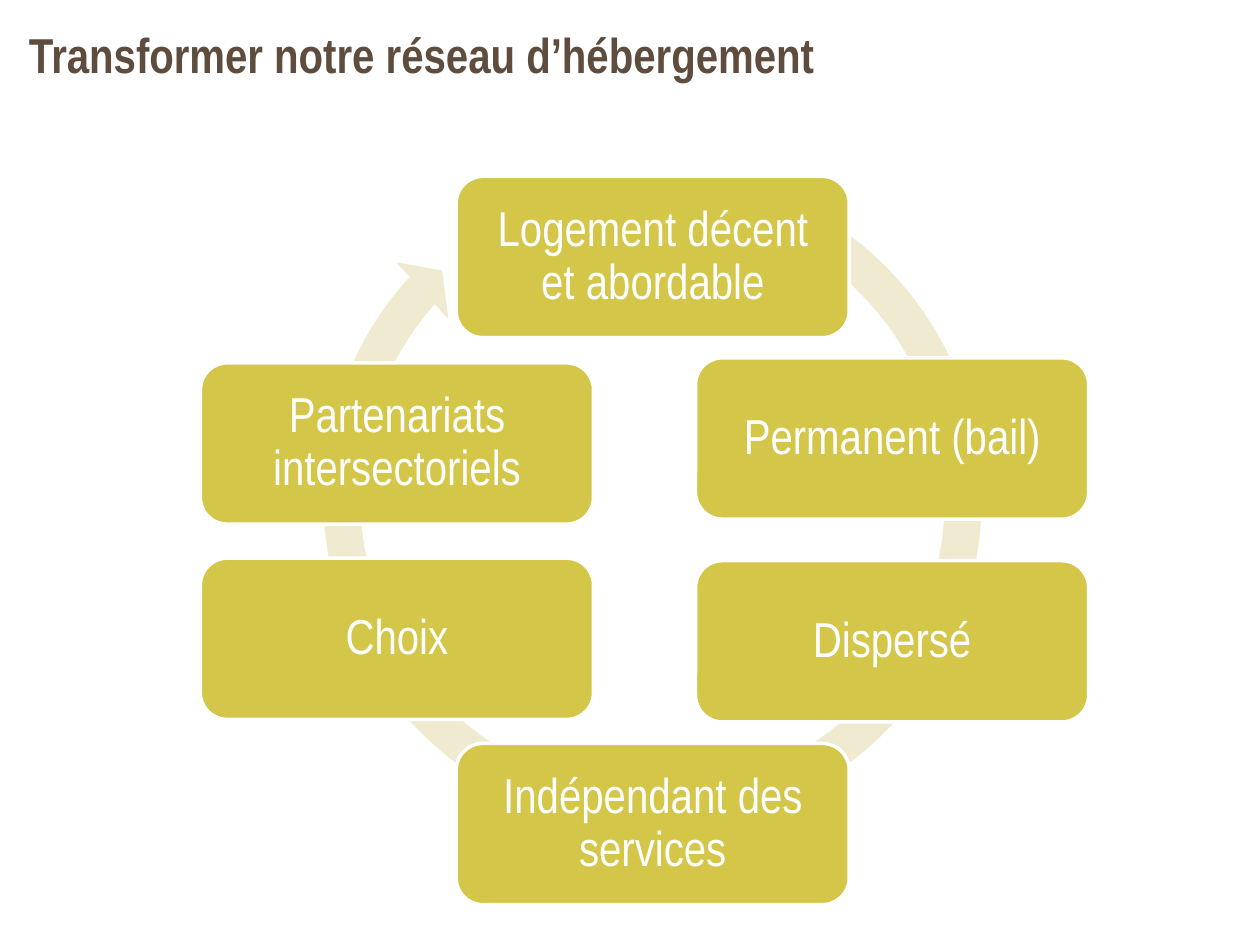
from pptx import Presentation
from pptx.dml.color import RGBColor
from pptx.enum.shapes import MSO_SHAPE as Shape
from pptx.enum.text import MSO_ANCHOR as Anchor, PP_ALIGN as Align
from pptx.util import Inches, Pt

WHITE = RGBColor(0xFF, 0xFF, 0xFF)
BROWN = RGBColor(0x5E, 0x4D, 0x3E)
OLIVE = RGBColor(0xD3, 0xC6, 0x49)
CREAM = RGBColor(0xEF, 0xEA, 0xD0)
FONT = "Arial Narrow"
COLS, ROWS = 100, 75
CELL = Inches(10) // COLS
CARD = (31.2, 12.8)
LEFT, MID, RIGHT = 15.9, 36.2, 55.2
STEPS = [
    ("Logement décent et abordable", MID, 14),
    ("Permanent (bail)", RIGHT, 28.4),
    ("Dispersé", RIGHT, 44.5),
    ("Indépendant des services", MID, 59),
    ("Choix", LEFT, 44.3),
    ("Partenariats intersectoriels", LEFT, 28.8),
]


def grid(*cells):
    """Turn counts of grid cells into slide lengths."""
    return [round(n * CELL) for n in cells]


def write(frame, text, color, pads, align, bold=False):
    """Fill a text frame with one styled paragraph."""
    frame.word_wrap = True
    frame.margin_left = frame.margin_right = Inches(pads[0])
    frame.margin_top = frame.margin_bottom = Inches(pads[1])
    para = frame.paragraphs[0]
    para.text = text
    para.alignment = align
    para.line_spacing = 0.9
    font = para.runs[0].font
    font.name, font.size, font.bold = FONT, Pt(28), bold
    font.color.rgb = color


def add_form(slide, kind, box, fill):
    """Add a flat filled preset shape."""
    form = slide.shapes.add_shape(kind, *grid(*box))
    form.shadow.inherit = False
    form.fill.solid()
    form.fill.fore_color.rgb = fill
    form.line.fill.background()
    return form


def add_title(slide, text):
    """Add the slide heading."""
    box = slide.shapes.add_textbox(*grid(2.3, 1.7, 73.1, 10.1))
    write(box.text_frame, text, BROWN, (0, 0.08), Align.LEFT, True)


def add_ring(slide):
    """Add the round arrow that links the steps."""
    ring = add_form(slide, Shape.CIRCULAR_ARROW, (24.1, 11.9, 55.4, 55.4), CREAM)
    for i, value in enumerate((0.053, 3.126, 133.277, 176.767, 0.055)):
        ring.adjustments[i] = value


def add_step(slide, text, col, row):
    """Add one step card of the cycle."""
    card = add_form(slide, Shape.ROUNDED_RECTANGLE, (col, row, *CARD), OLIVE)
    card.line.color.rgb = WHITE
    card.line.width = Pt(2)
    card.text_frame.vertical_anchor = Anchor.MIDDLE
    write(card.text_frame, text, WHITE, (0.12, 0.12), Align.CENTER)


def main():
    """Build and save the slide."""
    deck = Presentation()
    deck.slide_width, deck.slide_height = grid(COLS, ROWS)
    slide = deck.slides.add_slide(deck.slide_layouts[6])
    add_ring(slide)
    for step in STEPS:
        add_step(slide, *step)
    add_title(slide, "Transformer notre réseau d’hébergement")
    deck.save("out.pptx")


if __name__ == "__main__":
    main()
